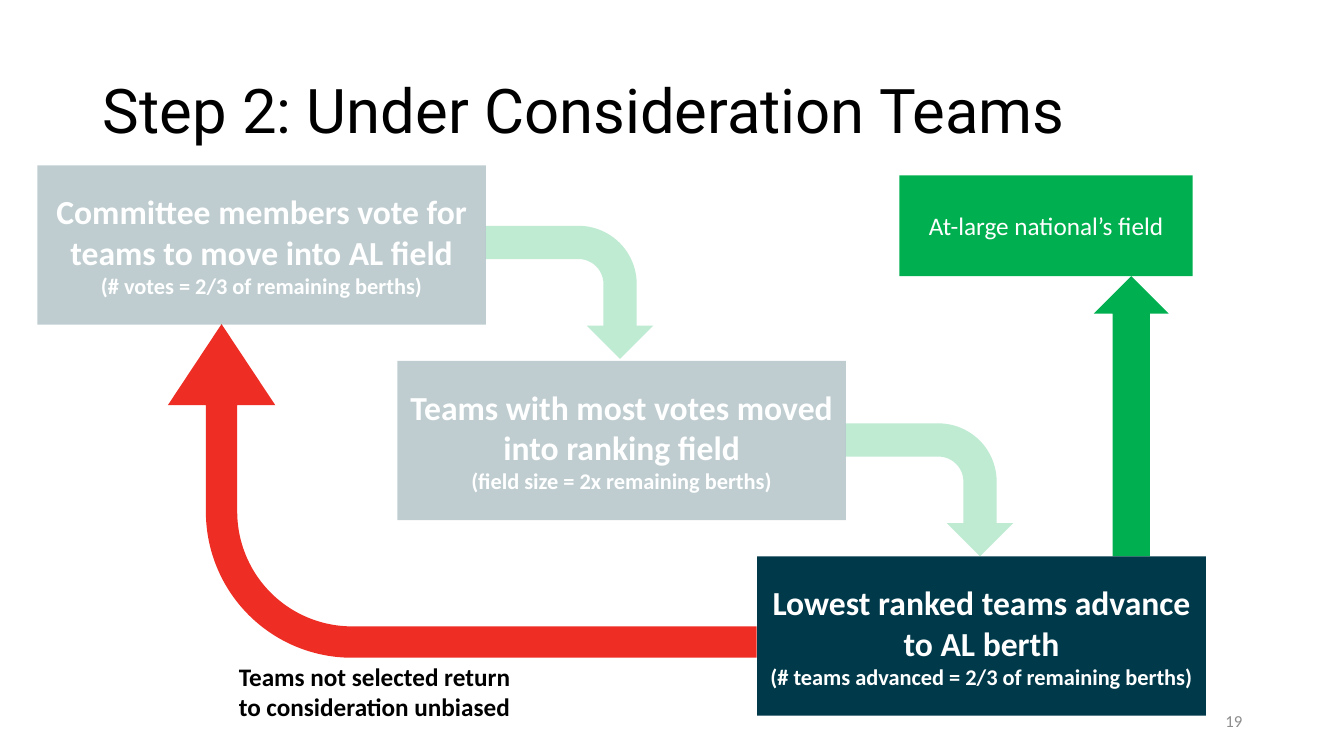
import pptx
import pptx.util
import pptx.dml.color
import pptx.enum.shapes
import pptx.enum.text
import pptx.oxml.ns
from lxml import etree

PX = 9144  # EMU per px, 100 px to the inch
SHAPE = pptx.enum.shapes.MSO_SHAPE
ALIGN = pptx.enum.text.PP_ALIGN
ANCHOR = pptx.enum.text.MSO_ANCHOR

NAVY, GREEN, RED = "00394A", "00B050", "EE2E24"
WHITE, BLACK, GREY = "FFFFFF", "000000", "8C8C8C"


def color(hex_string):
    return pptx.dml.color.RGBColor.from_string(hex_string)


class SlideBuilder:
    def __init__(self, presentation):
        self.slide = presentation.slides.add_slide(presentation.slide_layouts[5])

    def place(self, shape, box):
        for name, value in zip(("left", "top", "width", "height"), box):
            setattr(shape, name, value * PX)

    def fill_text(self, shape, lines, align, anchor=ANCHOR.MIDDLE, **paragraph_format):
        """Fill a shape with lines of (text, font values)."""
        frame = shape.text_frame
        frame.word_wrap = True
        frame.vertical_anchor = anchor
        for index, (text, font_values) in enumerate(lines):
            paragraph = frame.paragraphs[0] if index == 0 else frame.add_paragraph()
            for name, value in {"alignment": align, **paragraph_format}.items():
                setattr(paragraph, name, value)
            run = paragraph.add_run()
            run.text = text
            self.style(run.font, **font_values)

    def style(self, font, size, hex_string, name="Calibri", bold=False):
        values = {"size": pptx.util.Pt(size), "name": name, "bold": bold}
        for key, value in values.items():
            setattr(font, key, value)
        font.color.rgb = color(hex_string)

    def title(self, text, box):
        shape = self.slide.shapes.title
        self.place(shape, box)
        font_values = {"size": 44, "hex_string": BLACK, "name": "Roboto"}
        self.fill_text(shape, [(text, font_values)], ALIGN.LEFT, line_spacing=0.9)

    def label(self, text, box, align, anchor, **font_values):
        shape = self.slide.shapes.add_textbox(*(value * PX for value in box))
        self.fill_text(shape, [(text, font_values)], align, anchor)

    def block(self, kind, box, fill, opacity=100, rotation=0, adjustments=()):
        shape = self.slide.shapes.add_shape(kind, *(value * PX for value in box))
        shape.shadow.inherit = False
        shape.rotation = rotation
        shape.line.fill.background()
        shape.fill.solid()
        shape.fill.fore_color.rgb = color(fill)
        for index, value in enumerate(adjustments):
            shape.adjustments[index] = value
        if opacity < 100:
            fill_color = shape.element.spPr.find(".//" + pptx.oxml.ns.qn("a:srgbClr"))
            alpha = etree.SubElement(fill_color, pptx.oxml.ns.qn("a:alpha"))
            alpha.set("val", str(opacity * 1000))
        return shape

    def step(self, box, heading, detail, opacity):
        shape = self.block(SHAPE.RECTANGLE, box, NAVY, opacity)
        lines = [(text, {"size": size, "hex_string": WHITE, "bold": True})
                 for text, size in ((heading, 24), (detail, 16))]
        self.fill_text(shape, lines, ALIGN.CENTER)


def main():
    presentation = pptx.Presentation()
    presentation.slide_width = pptx.util.Inches(13.33)
    presentation.slide_height = pptx.util.Inches(7.5)
    builder = SlideBuilder(presentation)

    # Title and page number
    builder.title("Step 2: Under Consideration Teams", (92, 40, 1150, 145))
    builder.label("19", (942, 695, 300, 40), ALIGN.RIGHT, ANCHOR.MIDDLE,
                  size=12, hex_string=GREY)

    # Faded arrows from each step to the next
    step_x, step_y = 357, 194
    for index in range(2):
        box = (499 + index * step_x, 207 + index * (step_y + 2), 132, 166)
        builder.block(SHAPE.BENT_ARROW, box, GREEN, opacity=25, rotation=90)

    # Return path and advance path
    builder.block(SHAPE.BENT_ARROW, (293, 195, 331, 584), RED, rotation=270,
                  adjustments=(0.094, 0.161, 0.243, 0.438))
    builder.label("Teams not selected return to consideration unbiased",
                  (227, 651, 312, 71), ALIGN.LEFT, ANCHOR.TOP,
                  size=18, hex_string=BLACK, bold=True)
    builder.block(SHAPE.UP_ARROW, (1085, 274, 74, 278), GREEN)

    # Staircase of steps, the last one highlighted
    steps = [
        ("Committee members vote for teams to move into AL field",
         "(# votes = 2/3 of remaining berths)", 25),
        ("Teams with most votes moved into ranking field",
         "(field size = 2x remaining berths)", 25),
        ("Lowest ranked teams advance to AL berth",
         "(# teams advanced = 2/3 of remaining berths)", 100),
    ]
    for index, (heading, detail, opacity) in enumerate(steps):
        box = (37 + index * step_x, 164 + index * step_y, 445, 158)
        builder.step(box, heading, detail, opacity)

    # Destination field
    field = builder.block(SHAPE.RECTANGLE, (892, 174, 291, 100), GREEN)
    builder.fill_text(field, [("At-large national’s field", {"size": 18, "hex_string": WHITE})],
                      ALIGN.CENTER)

    presentation.save("out.pptx")


if __name__ == "__main__":
    main()
